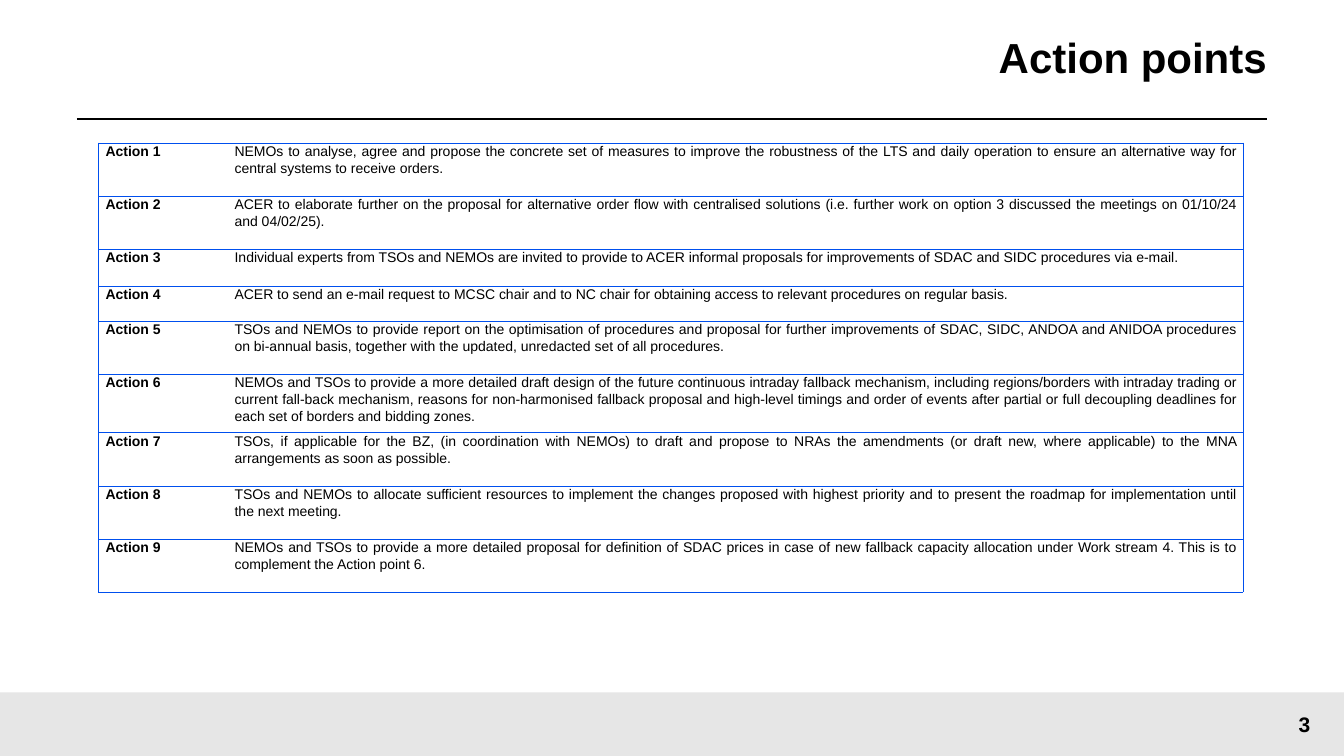
from dataclasses import dataclass

import pptx
import pptx.dml.color
import pptx.enum.shapes
import pptx.enum.text
import pptx.oxml
import pptx.oxml.ns
import pptx.util
from pptx.util import Pt

ALIGN = pptx.enum.text.PP_ALIGN
MIDDLE = pptx.enum.text.MSO_ANCHOR.MIDDLE
FONT = "Arial"
BLACK, WHITE, GREY, BLUE = "000000", "FFFFFF", "E6E6E6", "004FEE"
SLIDE_W, SLIDE_H = 960, 540
FOOTER_TOP = 494.6
RULE_Y = 85
RIGHT_EDGE = 905
COLUMN_WIDTHS = (92.2, 725.2)


@dataclass
class Action:
    text: str
    height: float = 37.9


ACTIONS = [
    Action("NEMOs to analyse, agree and propose the concrete set of measures to improve the robustness "
           "of the LTS and daily operation to ensure an alternative way for central systems to receive orders."),
    Action("ACER to elaborate further on the proposal for alternative order flow with centralised solutions "
           "(i.e. further work on option 3 discussed the meetings on 01/10/24 and 04/02/25)."),
    Action("Individual experts from TSOs and NEMOs are invited to provide to ACER informal proposals for "
           "improvements of SDAC and SIDC procedures via e-mail.", 26.4),
    Action("ACER to send an e-mail request to MCSC chair and to NC chair for obtaining access to relevant "
           "procedures on regular basis.", 25),
    Action("TSOs and NEMOs to provide report on the optimisation of procedures and proposal for further "
           "improvements of SDAC, SIDC, ANDOA and ANIDOA procedures on bi-annual basis, together with the "
           "updated, unredacted set of all procedures."),
    Action("NEMOs and TSOs to provide a more detailed draft design of the future continuous intraday fallback "
           "mechanism, including regions/borders with intraday trading or current fall-back mechanism, reasons "
           "for non-harmonised fallback proposal and high-level timings and order of events after partial or "
           "full decoupling deadlines for each set of borders and bidding zones.", 41.9),
    Action("TSOs, if applicable for the BZ, (in coordination with NEMOs) to draft and propose to NRAs the "
           "amendments (or draft new, where applicable) to the MNA arrangements as soon as possible."),
    Action("TSOs and NEMOs to allocate sufficient resources to implement the changes proposed with highest "
           "priority and to present the roadmap for implementation until the next meeting."),
    Action("NEMOs and TSOs to provide a more detailed proposal for definition of SDAC prices in case of new "
           "fallback capacity allocation under Work stream 4. This is to complement the Action point 6."),
]


def rgb(value: str) -> pptx.dml.color.RGBColor:
    return pptx.dml.color.RGBColor.from_string(value)


def write(tf, text: str, size: float, bold: bool, align):
    """Fill a text frame with one formatted paragraph and return it."""
    tf.text = text
    tf.word_wrap = True
    p = tf.paragraphs[0]
    p.alignment = align
    font = p.runs[0].font
    font.name, font.size, font.bold = FONT, Pt(size), bold
    font.color.rgb = rgb(BLACK)
    return p


def add_text(s, x: float, y: float, w: float, h: float, text: str, size: float, align):
    tf = s.shapes.add_textbox(Pt(x), Pt(y), Pt(w), Pt(h)).text_frame
    tf.vertical_anchor = MIDDLE
    tf.margin_left = tf.margin_right = 0
    return write(tf, text, size, True, align)


def set_borders(cell, sides: str) -> None:
    """Draw the given sides (letters of LRTB) in blue and clear the others."""
    tc_pr = cell._tc.get_or_add_tcPr()
    for i, side in enumerate("LRTB"):
        fill = f'<a:solidFill><a:srgbClr val="{BLUE}"/></a:solidFill>' if side in sides else "<a:noFill/>"
        tc_pr.insert(i, pptx.oxml.parse_xml(
            f'<a:ln{side} {pptx.oxml.ns.nsdecls("a")} w="{Pt(0.5)}">{fill}</a:ln{side}>'))


def fill_cell(cell, text: str, bold: bool, sides: str) -> None:
    cell.margin_left = cell.margin_right = Pt(5)
    cell.margin_top = cell.margin_bottom = 0
    p = write(cell.text_frame, text, 10, bold, ALIGN.JUSTIFY)
    p.line_spacing, p.space_after = 1.07, Pt(8)
    cell.fill.solid()
    cell.fill.fore_color.rgb = rgb(WHITE)
    set_borders(cell, sides)


def add_actions(s) -> None:
    table = s.shapes.add_table(len(ACTIONS), len(COLUMN_WIDTHS), Pt(70.4), Pt(102.2), Pt(sum(COLUMN_WIDTHS)),
                               Pt(sum(a.height for a in ACTIONS))).table
    table.first_row = table.horz_banding = False
    for column, width in zip(table.columns, COLUMN_WIDTHS):
        column.width = Pt(width)
    for i, action in enumerate(ACTIONS):
        table.rows[i].height = Pt(action.height)
        fill_cell(table.cell(i, 0), f"Action {i + 1}", True, "LTB")
        fill_cell(table.cell(i, 1), action.text, False, "RTB")


def add_frame(s) -> None:
    """Draw the footer band and the rule below the title."""
    sp = s.shapes.add_shape(pptx.enum.shapes.MSO_SHAPE.RECTANGLE, 0, Pt(FOOTER_TOP),
                            Pt(SLIDE_W), Pt(SLIDE_H - FOOTER_TOP))
    sp.shadow.inherit = False
    sp.fill.solid()
    sp.fill.fore_color.rgb = rgb(GREY)
    sp.line.fill.background()
    rule = s.shapes.add_connector(pptx.enum.shapes.MSO_CONNECTOR.STRAIGHT,
                                  Pt(55), Pt(RULE_Y), Pt(RIGHT_EDGE), Pt(RULE_Y))
    rule.line.color.rgb = rgb(BLACK)
    rule.line.width = Pt(1.5)
    rule._element.spPr.append(pptx.oxml.parse_xml(f'<a:effectLst {pptx.oxml.ns.nsdecls("a")}/>'))


def main() -> None:
    prs = pptx.Presentation()
    prs.slide_width, prs.slide_height = Pt(SLIDE_W), Pt(SLIDE_H)
    s = prs.slides.add_slide(prs.slide_layouts[6])
    add_frame(s)
    title = add_text(s, 219, 0, RIGHT_EDGE - 219, RULE_Y, "Action points", 30, ALIGN.RIGHT)
    title.line_spacing = 0.9
    add_text(s, 903.4, FOOTER_TOP, 56.6, SLIDE_H - FOOTER_TOP, "3", 15, ALIGN.CENTER)
    add_actions(s)
    prs.save("out.pptx")


if __name__ == "__main__":
    main()
